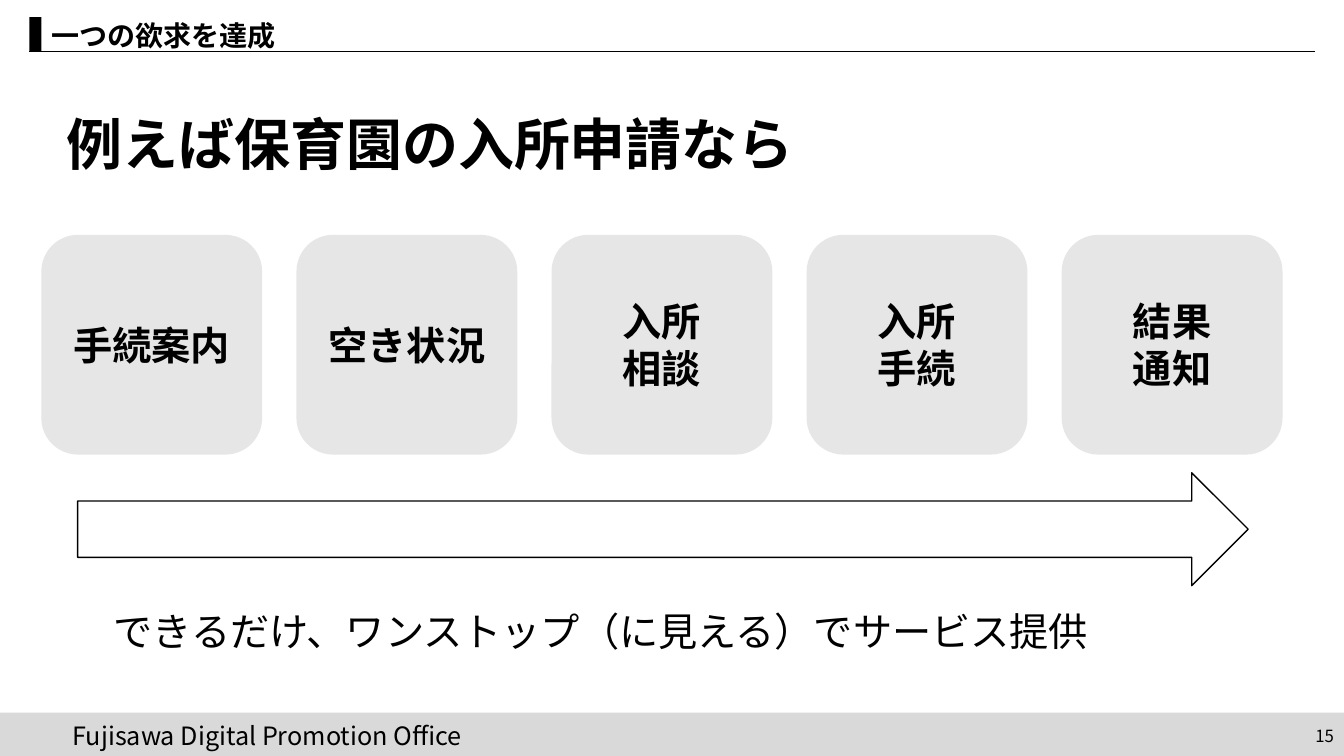
from lxml.etree import SubElement
from pptx import Presentation
from pptx.dml.color import RGBColor
from pptx.enum.shapes import MSO_CONNECTOR, MSO_SHAPE
from pptx.enum.text import MSO_ANCHOR, PP_ALIGN
from pptx.oxml.ns import qn
from pptx.util import Inches, Pt

BLACK = RGBColor(0x00, 0x00, 0x00)
WHITE = RGBColor(0xFF, 0xFF, 0xFF)
FOOTER_GRAY = RGBColor(0xD9, 0xD9, 0xD9)
STEP_GRAY = RGBColor(0xE7, 0xE6, 0xE6)
JAPANESE_FONT = "Noto Sans CJK JP"

presentation = Presentation()
presentation.slide_width = Inches(13.33)
presentation.slide_height = Inches(7.5)
slide = presentation.slides.add_slide(presentation.slide_layouts[6])


def write_text(shape, text, size, bold=False, align=PP_ALIGN.LEFT,
               anchor=MSO_ANCHOR.TOP, font=JAPANESE_FONT):
    """Fill a shape with text, one paragraph per line, in one style."""
    frame = shape.text_frame
    frame.text = text
    frame.word_wrap = True
    frame.vertical_anchor = anchor
    for paragraph in frame.paragraphs:
        paragraph.alignment = align
        for run in paragraph.runs:
            run.font.size = Pt(size)
            run.font.bold = bold
            run.font.color.rgb = BLACK
            run.font.name = font
            east_asian = SubElement(run.font._element, qn("a:ea"))
            east_asian.set("typeface", JAPANESE_FONT)


def add_block(preset, left, top, width, height, fill):
    block = slide.shapes.add_shape(
        preset, Inches(left), Inches(top), Inches(width), Inches(height))
    block.shadow.inherit = False
    block.fill.solid()
    block.fill.fore_color.rgb = fill
    block.line.fill.background()
    return block


# Footer band
add_block(MSO_SHAPE.RECTANGLE, 0, 7.07, 13.33, 0.47, FOOTER_GRAY)
office = slide.shapes.add_textbox(Inches(0.62), Inches(7.1), Inches(5.39), Inches(0.4))
write_text(office, "Fujisawa Digital Promotion Office", 18)
page_number = slide.shapes.add_textbox(Inches(10.33), Inches(7.1), Inches(3), Inches(0.4))
write_text(page_number, "15", 12, align=PP_ALIGN.RIGHT, anchor=MSO_ANCHOR.MIDDLE)

# Header with rule and marker
header_rule = slide.shapes.add_connector(
    MSO_CONNECTOR.STRAIGHT, Inches(0.29), Inches(0.51), Inches(13.04), Inches(0.51))
header_rule.line.color.rgb = BLACK
header_rule.line.width = Pt(0.5)
SubElement(header_rule._element.spPr, qn("a:effectLst"))
header = slide.shapes.add_textbox(Inches(0.41), Inches(0.13), Inches(12.68), Inches(0.44))
write_text(header, "一つの欲求を達成", 20, bold=True)
add_block(MSO_SHAPE.RECTANGLE, 0.29, 0.17, 0.12, 0.34, BLACK)

# Application steps, left to right
steps = ["手続案内", "空き状況", "入所\n相談", "入所\n手続", "結果\n通知"]
for index, step in enumerate(steps):
    step_box = add_block(
        MSO_SHAPE.ROUNDED_RECTANGLE, 0.41 + 2.53 * index, 2.33, 2.19, 2.18, STEP_GRAY)
    write_text(step_box, step, 28, bold=True,
               align=PP_ALIGN.CENTER, anchor=MSO_ANCHOR.MIDDLE)

flow_arrow = add_block(MSO_SHAPE.RIGHT_ARROW, 0.77, 4.69, 11.61, 1.12, WHITE)
flow_arrow.line.color.rgb = BLACK
flow_arrow.line.width = Pt(1)

# Heading and conclusion
heading = slide.shapes.add_textbox(Inches(0.56), Inches(1.04), Inches(12.39), Inches(0.77))
write_text(heading, "例えば保育園の入所申請なら", 40, bold=True, font="Arial")
conclusion = slide.shapes.add_textbox(Inches(1.03), Inches(5.98), Inches(10.09), Inches(0.57))
write_text(conclusion, "できるだけ、ワンストップ（に見える）でサービス提供", 28)

presentation.save("out.pptx")
